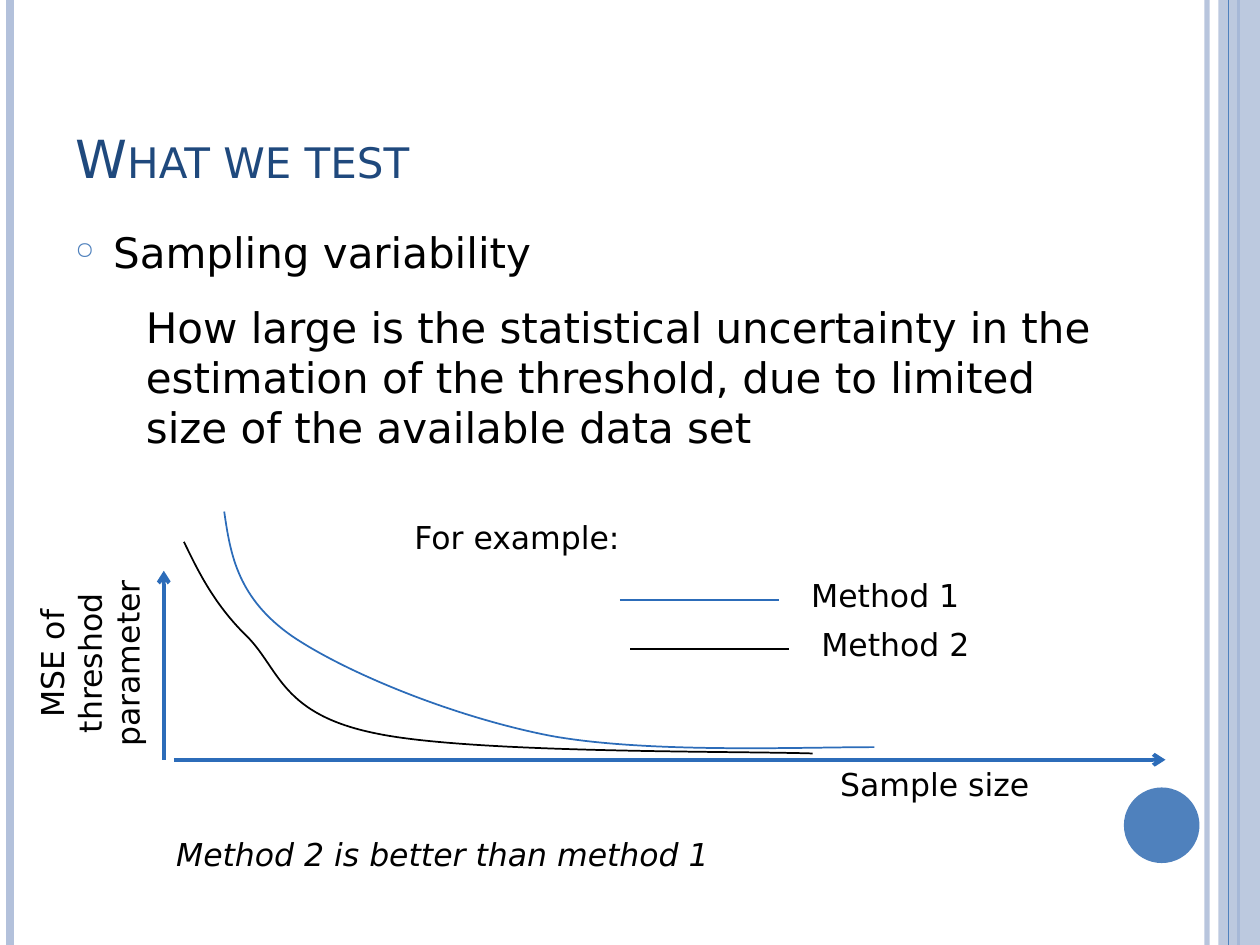
from typing import NamedTuple

from lxml import etree
from pptx import Presentation
from pptx import util as u
from pptx.dml import color
from pptx.enum import shapes, text
from pptx.oxml import ns

PX = 9144  # EMU per px, 100 px to the inch
FONT = "DejaVu Sans"
BLACK, NAVY, BLUE, PALE, STROKE = "000000", "1F497D", "4F81BD", "B3C1DB", "2C6CB9"

Point = tuple[int, int]


class Line(NamedTuple):
    start: Point
    end: Point
    colour: str
    width: float
    alpha: int = 100
    arrow: bool = False


class Label(NamedTuple):
    words: str
    box: tuple[int, int, int, int]
    size: int = 18
    colour: str = BLACK
    italic: bool = False
    rotation: int = 0
    align: text.PP_ALIGN = text.PP_ALIGN.LEFT
    anchor: text.MSO_ANCHOR = text.MSO_ANCHOR.TOP


class Curve(NamedTuple):
    """Chain of cubic Bezier pieces: a start, then three points a piece."""
    points: list[Point]
    colour: str


class Method(NamedTuple):
    name: str
    curve: Curve


def rgb(value: str) -> color.RGBColor:
    return color.RGBColor.from_string(value)


def add_xml(parent, tag: str, **attributes: str):
    return etree.SubElement(parent, ns.qn(tag), attributes)


def set_alpha(sp, percent: int) -> None:
    clr = next(sp._element.spPr.iter(ns.qn("a:srgbClr")))
    add_xml(clr, "a:alpha", val=str(percent * 1000))


def draw_line(slide, line: Line):
    ends = [v * PX for v in (*line.start, *line.end)]
    cx = slide.shapes.add_connector(shapes.MSO_CONNECTOR.STRAIGHT, *ends)
    cx.line.color.rgb = rgb(line.colour)
    cx.line.width = u.Pt(line.width)
    if line.alpha < 100:
        set_alpha(cx, line.alpha)
    if line.arrow:
        add_xml(cx.line._get_or_add_ln(), "a:tailEnd", type="arrow")
    add_xml(cx._element.spPr, "a:effectLst")
    return cx


def draw_solid(slide, kind: shapes.MSO_SHAPE, box: tuple[int, int, int, int],
               colour: str, alpha: int = 100):
    sp = slide.shapes.add_shape(kind, *(v * PX for v in box))
    sp.shadow.inherit = False
    sp.fill.solid()
    sp.fill.fore_color.rgb = rgb(colour)
    sp.line.fill.background()
    if alpha < 100:
        set_alpha(sp, alpha)
    return sp


def draw_label(slide, label: Label):
    sp = slide.shapes.add_textbox(*(v * PX for v in label.box))
    sp.rotation = label.rotation
    tf = sp.text_frame
    tf.word_wrap = True
    tf.vertical_anchor = label.anchor
    tf.text = label.words
    p = tf.paragraphs[0]
    p.alignment = label.align
    font = p.runs[0].font
    font.name, font.size, font.italic = FONT, u.Pt(label.size), label.italic
    font.color.rgb = rgb(label.colour)
    return sp


def add_bullet(p) -> None:
    p.space_before = u.Pt(6)
    pPr = p._p.get_or_add_pPr()
    pPr.set("marL", str(30 * PX))
    pPr.set("indent", str(-30 * PX))
    add_xml(add_xml(pPr, "a:buClr"), "a:srgbClr", val=BLUE)
    add_xml(pPr, "a:buSzPct", val="57000")
    add_xml(pPr, "a:buChar", char="○")


def bend_segments(sp) -> None:
    """Turn every three straight segments into one cubic Bezier piece."""
    segments = list(sp._element.spPr.iter(ns.qn("a:lnTo")))
    for i in range(0, len(segments), 3):
        piece = etree.Element(ns.qn("a:cubicBezTo"))
        segments[i].addprevious(piece)
        for segment in segments[i:i + 3]:
            piece.append(segment[0])
            segment.getparent().remove(segment)


def draw_curve(slide, curve: Curve):
    start, *rest = curve.points
    builder = slide.shapes.build_freeform(*start, scale=PX)
    builder.add_line_segments(rest, close=False)
    sp = builder.convert_to_shape()
    bend_segments(sp)
    sp.shadow.inherit = False
    sp.fill.background()
    sp.line.color.rgb = rgb(curve.colour)
    sp.line.width = u.Pt(1)
    return sp


def side_line(x: int, colour: str, width: float, alpha: int = 100) -> Line:
    return Line((x, 0), (x, 750), colour, width, alpha)


METHODS = [
    Method("Method 1", Curve([
        (178, 406), (183, 441), (189, 475), (232, 505), (275, 534), (360, 569),
        (437, 584), (514, 598), (635, 593), (694, 593)], STROKE)),
    Method("Method 2", Curve([
        (146, 430), (158, 455), (171, 481), (197, 506), (222, 532), (224, 567),
        (298, 582), (373, 598), (583, 596), (645, 598)], BLACK)),
]
AXES = [
    Line((138, 603), (925, 603), STROKE, 2.25, arrow=True),
    Line((130, 603), (130, 453), STROKE, 2.25, arrow=True),
]
LABELS = [
    Label("How large is the statistical uncertainty in the estimation of the threshold, "
          "due to limited size of the available data set", (106, 234, 795, 212), 24),
    Label("MSE of threshod parameter", (-27, 476, 197, 101), rotation=270,
          align=text.PP_ALIGN.CENTER),
    Label("Sample size", (657, 602, 197, 40)),
    Label("Method 2 is better than method 1", (130, 658, 606, 40), italic=True),
    Label("For example:", (319, 406, 244, 40)),
]


def draw_frame(slide) -> None:
    for line in (side_line(958, PALE, 3, 93), side_line(8, PALE, 4.5),
                 side_line(983, BLUE, 1.5)):
        draw_line(slide, line)
    draw_solid(slide, shapes.MSO_SHAPE.RECTANGLE, (967, 0, 33, 750), PALE, 87)
    draw_line(slide, side_line(975, BLUE, 0.75))
    draw_solid(slide, shapes.MSO_SHAPE.OVAL, (892, 625, 60, 60), BLUE)


def main() -> None:
    prs = Presentation()
    prs.slide_width, prs.slide_height = 1000 * PX, 750 * PX
    slide = prs.slides.add_slide(prs.slide_layouts[6])
    draw_frame(slide)

    title = draw_label(slide, Label("What we test", (50, 30, 817, 125), 30, NAVY,
                                    anchor=text.MSO_ANCHOR.BOTTOM))
    title.text_frame.paragraphs[0].runs[0].font._element.set("cap", "small")
    topic = draw_label(slide, Label("Sampling variability", (50, 175, 817, 239), 24))
    add_bullet(topic.text_frame.paragraphs[0])

    for axis in AXES:
        draw_line(slide, axis)
    for i, method in enumerate(METHODS):
        dx, dy = 8 * i, 39 * i
        draw_curve(slide, method.curve)
        draw_line(slide, Line((492 + dx, 476 + dy), (618 + dx, 476 + dy),
                              method.curve.colour, 1))
        draw_label(slide, Label(method.name, (634 + dx, 452 + dy, 173, 40)))
    for label in LABELS:
        draw_label(slide, label)
    prs.save("out.pptx")


if __name__ == "__main__":
    main()
